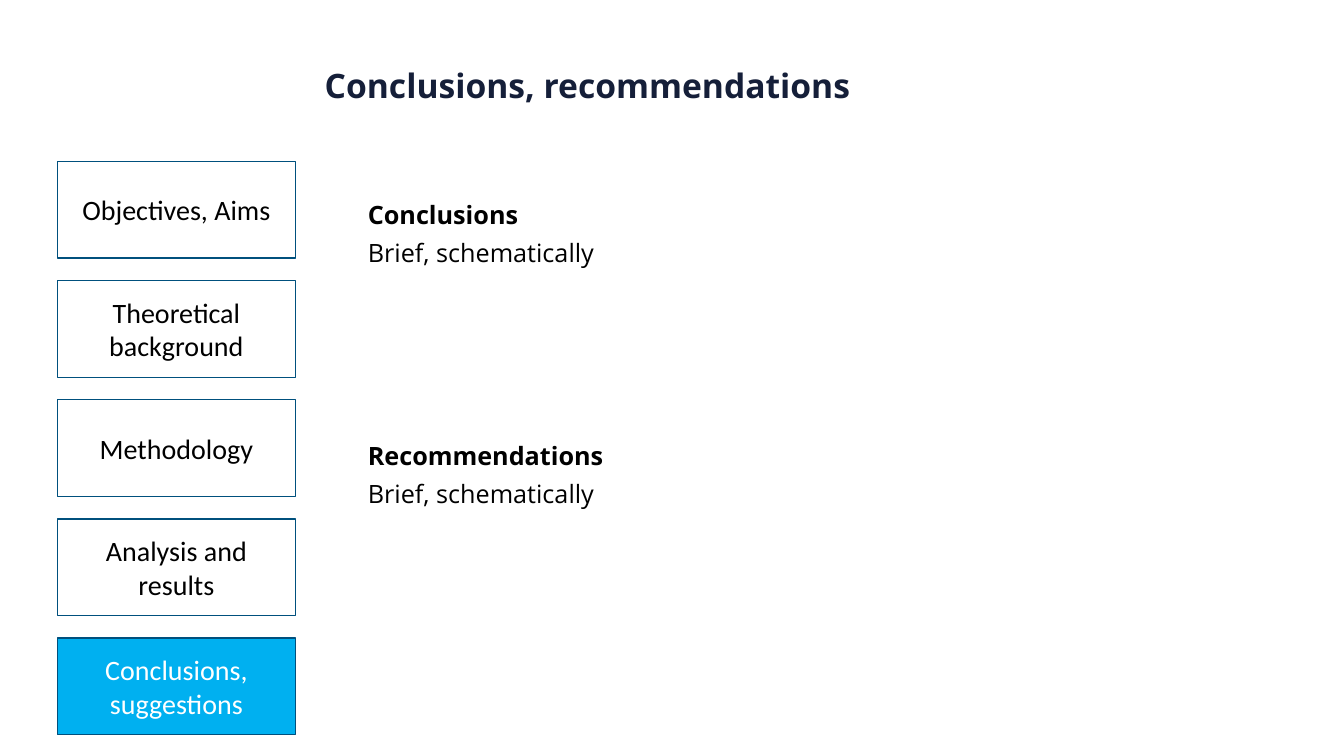
from pptx import Presentation
from pptx.dml.color import RGBColor
from pptx.enum.shapes import MSO_SHAPE as Shape
from pptx.enum.text import MSO_ANCHOR as Anchor, PP_ALIGN as Align
from pptx.util import Inches, Pt

NAVY = RGBColor(0x15, 0x1F, 0x39)
BLACK = RGBColor(0x00, 0x00, 0x00)
WHITE = RGBColor(0xFF, 0xFF, 0xFF)
BORDER = RGBColor(0x00, 0x50, 0x7D)
ACTIVE = RGBColor(0x00, 0xB0, 0xF0)

STEPS = ["Objectives, Aims", "Theoretical background", "Methodology",
         "Analysis and results", "Conclusions, suggestions"]
CURRENT_STEP = "Conclusions, suggestions"
STEP_TOP, STEP_PITCH = 1.6, 1.1825

# Text, bold, space before in points
BODY = [("Conclusions", True, 0),
        ("Brief, schematically", False, 7.5),
        ("Recommendations", True, 126),
        ("Brief, schematically", False, 7.5)]


class SlideBuilder:
    text_font = "Open Sans"
    step_font = "Calibri"

    def __init__(self, page):
        self.page = page

    def place(self, shape, left, top, width, height):
        shape.left, shape.top = Inches(left), Inches(top)
        shape.width, shape.height = Inches(width), Inches(height)

    def style(self, para, name, size, color, bold=False):
        font = para.font
        font.name, font.size, font.bold = name, Pt(size), bold
        font.color.rgb = color

    def title(self, text, *bounds):
        title = self.page.shapes.title
        self.place(title, *bounds)
        frame = title.text_frame
        frame.text = text
        frame.vertical_anchor = Anchor.BOTTOM
        para = frame.paragraphs[0]
        para.alignment = Align.LEFT
        para.line_spacing = 0.9
        self.style(para, self.text_font, 24, NAVY, bold=True)

    def body(self, lines, *bounds):
        box = self.page.shapes.add_textbox(*map(Inches, bounds))
        frame = box.text_frame
        frame.word_wrap = True
        for index, (text, bold, space) in enumerate(lines):
            para = frame.add_paragraph() if index else frame.paragraphs[0]
            para.text = text
            para.line_spacing = 0.9
            para.space_before = Pt(space)
            self.style(para, self.text_font, 18, BLACK, bold)

    def step(self, text, active, *bounds):
        box = self.page.shapes.add_shape(Shape.ROUNDED_RECTANGLE, *map(Inches, bounds))
        box.adjustments[0] = 0
        box.shadow.inherit = False
        box.fill.solid()
        box.fill.fore_color.rgb = ACTIVE if active else WHITE
        box.line.color.rgb = BORDER
        box.line.width = Pt(1)
        frame = box.text_frame
        frame.word_wrap = True
        frame.vertical_anchor = Anchor.MIDDLE
        frame.text = text
        para = frame.paragraphs[0]
        para.alignment = Align.CENTER
        self.style(para, self.step_font, 20, WHITE if active else BLACK)


def main():
    deck = Presentation()
    deck.slide_width, deck.slide_height = Inches(13.33), Inches(7.5)
    title_only = deck.slide_layouts[5]
    builder = SlideBuilder(deck.slides.add_slide(title_only))
    builder.title("Conclusions, recommendations", 3.12, 0.2, 5.64, 0.9)
    builder.body(BODY, 3.55, 1.96, 8.83, 4.03)
    for index, text in enumerate(STEPS):
        top = STEP_TOP + index * STEP_PITCH
        builder.step(text, text == CURRENT_STEP, 0.57, top, 2.36, 0.96)
    deck.save("out.pptx")


if __name__ == "__main__":
    main()
